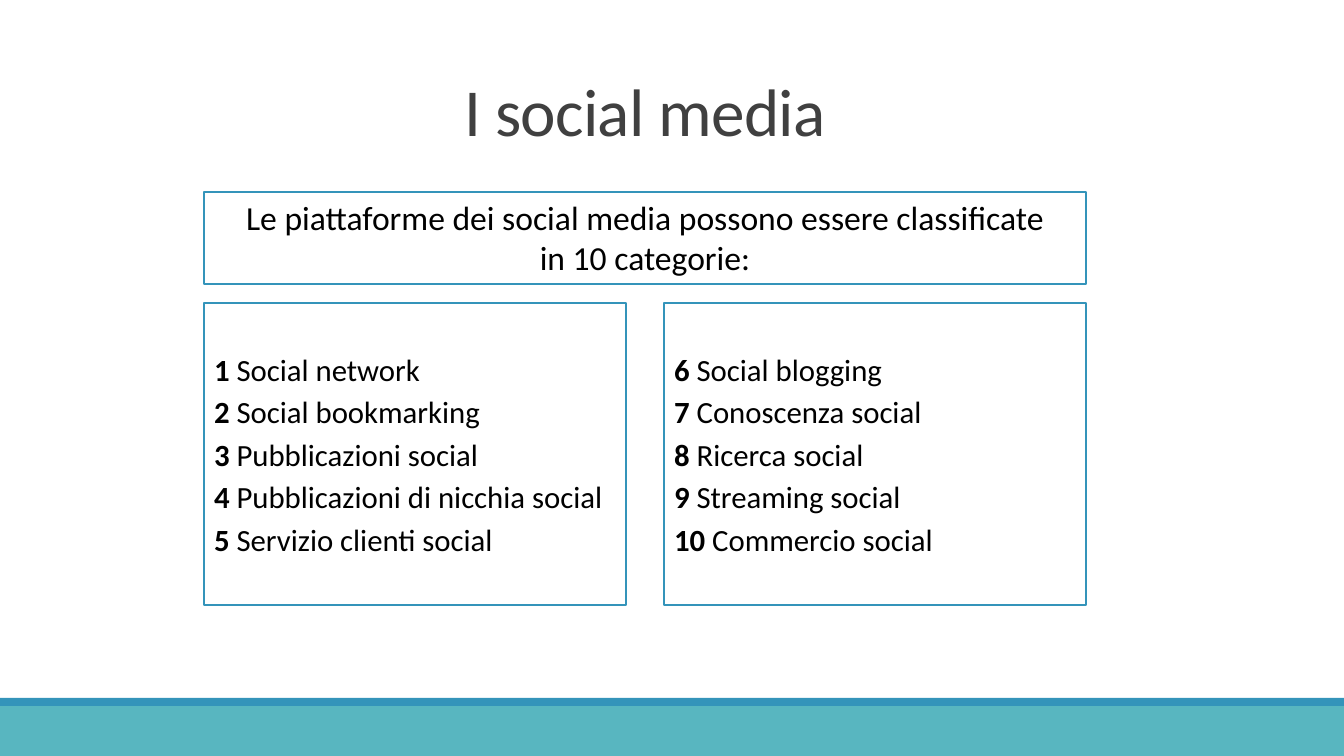
"""Build a slide listing the ten categories of social media."""
import pptx
import pptx.dml.color
import pptx.enum.shapes
import pptx.enum.text
import pptx.util

TITLE = "I social media"
INTRO = ["Le piattaforme dei social media possono essere classificate",
         "in 10 categorie:"]
CATEGORIES = [
    "Social network", "Social bookmarking", "Pubblicazioni social",
    "Pubblicazioni di nicchia social", "Servizio clienti social",
    "Social blogging", "Conoscenza social", "Ricerca social",
    "Streaming social", "Commercio social",
]
COLORS = {"title": "404040", "text": "000000", "box": "FFFFFF",
          "blue": "3494BA", "teal": "58B6C0"}
FONT = "Calibri"
WIDTH, HEIGHT = 1344, 756
LEFT, CONTENT_W = 204, 882
COLUMN_W, COLUMN_TOP, COLUMN_H = 422, 303, 302
PER_COLUMN = 5
BARS = [(706, 50, "teal"), (698, 8, "blue")]
ALIGN = pptx.enum.text.PP_ALIGN
ANCHOR = pptx.enum.text.MSO_ANCHOR


def px(n):
    return pptx.util.Emu(round(n * 914400 / 100.8))


def rgb(name):
    return pptx.dml.color.RGBColor.from_string(COLORS[name])


def place(sp, x, y, w, h):
    sp.left, sp.top, sp.width, sp.height = px(x), px(y), px(w), px(h)


def style_run(r, size, color="text", bold=False):
    r.font.name, r.font.size, r.font.bold = FONT, pptx.util.Pt(size), bold
    r.font.color.rgb = rgb(color)


def style_box(sp):
    sp.fill.solid()
    sp.fill.fore_color.rgb = rgb("box")
    sp.line.color.rgb = rgb("blue")
    sp.line.width = pptx.util.Pt(1.25)


def add_rect(s, x, y, w, h):
    sp = s.shapes.add_shape(pptx.enum.shapes.MSO_SHAPE.RECTANGLE,
                            px(x), px(y), px(w), px(h))
    sp.shadow.inherit = False
    return sp


def add_bars(s):
    for y, h, color in BARS:
        sp = add_rect(s, 0, y, WIDTH, h)
        sp.fill.solid()
        sp.fill.fore_color.rgb = rgb(color)
        sp.line.fill.background()


def fill_title(sp):
    place(sp, 129, 77, 1032, 116)
    tf = sp.text_frame
    tf.text = TITLE
    tf.auto_size = pptx.enum.text.MSO_AUTO_SIZE.NONE
    tf.vertical_anchor = ANCHOR.TOP
    p = tf.paragraphs[0]
    p.alignment, p.line_spacing = ALIGN.CENTER, 0.85
    r = p.runs[0]
    style_run(r, 48, "title")
    r.font._element.set("spc", "-50")


def add_intro(s):
    sp = add_rect(s, LEFT, 192, CONTENT_W, 92)
    style_box(sp)
    tf = sp.text_frame
    tf.word_wrap = True
    tf.vertical_anchor = ANCHOR.TOP
    tf.text = "\n".join(INTRO)
    for p in tf.paragraphs:
        p.alignment = ALIGN.CENTER
        style_run(p.runs[0], 24)


def fill_column(sp, col):
    place(sp, LEFT + col * (CONTENT_W - COLUMN_W), COLUMN_TOP, COLUMN_W, COLUMN_H)
    style_box(sp)
    tf = sp.text_frame
    tf.auto_size = pptx.enum.text.MSO_AUTO_SIZE.NONE
    tf.vertical_anchor = ANCHOR.MIDDLE
    first = col * PER_COLUMN
    for i, name in enumerate(CATEGORIES[first:first + PER_COLUMN]):
        p = tf.add_paragraph() if i else tf.paragraphs[0]
        p.space_before = pptx.util.Pt(4 if i else 0)
        pPr = p._p.get_or_add_pPr()
        pPr.set("marL", "0")
        pPr.set("indent", "0")
        pPr.append(pptx.oxml.parse_xml(
            '<a:buNone xmlns:a="http://schemas.openxmlformats.org/drawingml/2006/main"/>'))
        for text, bold in ((f"{first + i + 1} ", True), (name, False)):
            r = p.add_run()
            r.text = text
            style_run(r, 22, bold=bold)


def main():
    prs = pptx.Presentation()
    prs.slide_width, prs.slide_height = px(WIDTH), px(HEIGHT)
    s = prs.slides.add_slide(prs.slide_layouts[3])
    add_bars(s)
    fill_title(s.shapes.title)
    for col in range(2):
        fill_column(s.placeholders[col + 1], col)
    add_intro(s)
    prs.save("out.pptx")


if __name__ == "__main__":
    main()
